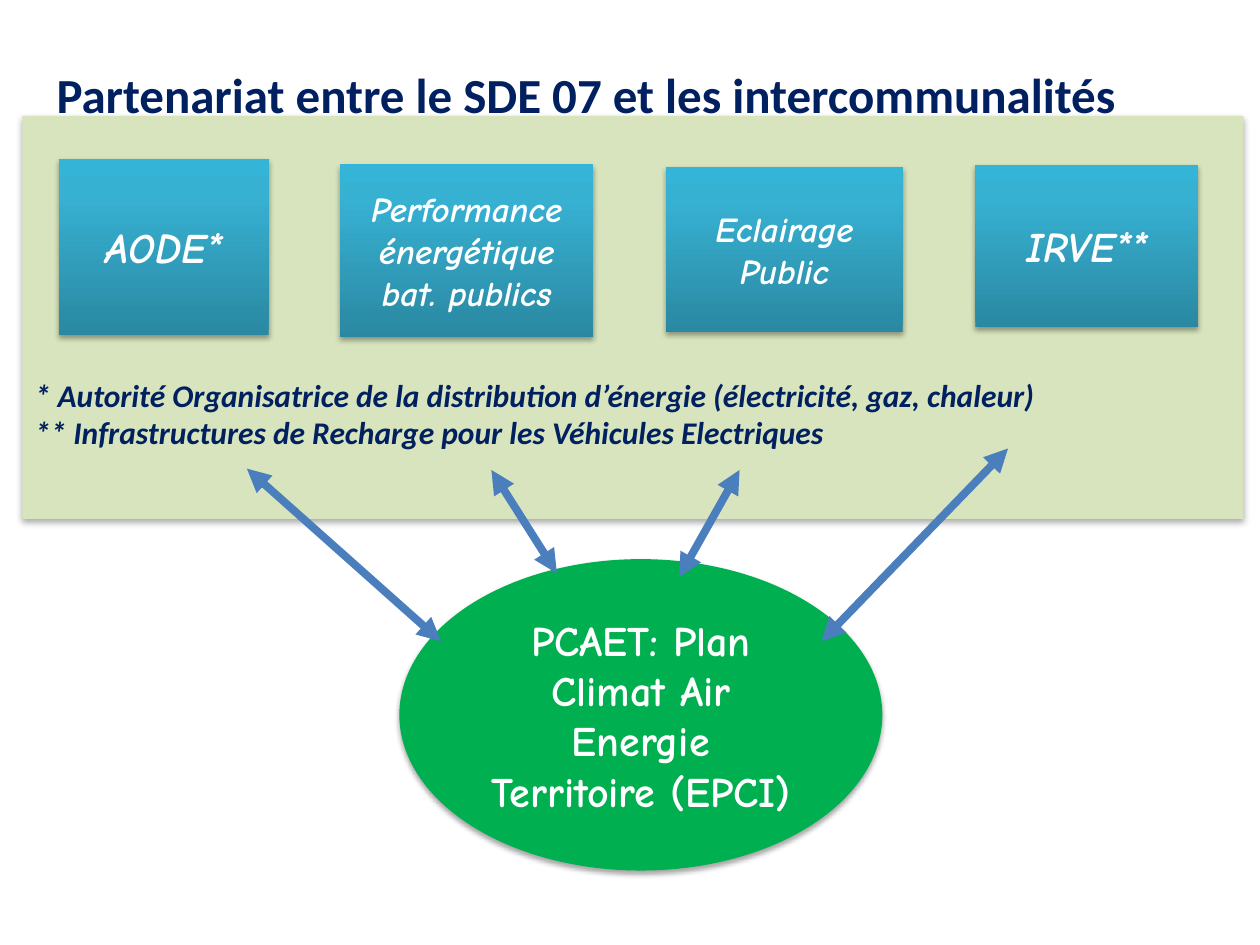
import copy
import pptx
import pptx.util
import pptx.dml.color
import pptx.enum.shapes
import pptx.enum.text
import pptx.oxml
import pptx.oxml.ns

Pt = pptx.util.Pt
RGB = pptx.dml.color.RGBColor
Kind = pptx.enum.shapes.MSO_SHAPE
Anchor = pptx.enum.text.MSO_ANCHOR
Align = pptx.enum.text.PP_ALIGN
qn = pptx.oxml.ns.qn

NAVY = RGB(0x00, 0x20, 0x60)
WHITE = RGB(0xFF, 0xFF, 0xFF)
GREEN = RGB(0x00, 0xB0, 0x50)
PALE = RGB(0xD7, 0xE4, 0xBD)
BLUE = RGB(0x4B, 0x7E, 0xBC)
TEALS = [(0, RGB(0x2A, 0x88, 0xA2)), (0.8, RGB(0x37, 0xB1, 0xD2)),
         (1, RGB(0x34, 0xB4, 0xD6))]


class Deck:
    """Holds the style and the current slide."""
    plain = "Calibri"
    comic = "Comic Neue"

    def __init__(self, wide, high):
        self.prs = pptx.Presentation()
        self.prs.slide_width, self.prs.slide_height = Pt(wide), Pt(high)
        self.slide = self.prs.slides.add_slide(self.prs.slide_layouts[6])

    def fill_text(self, frame, lines, size, font, color, italic=False,
                  align=Align.LEFT):
        frame.word_wrap = True
        for i, line in enumerate(lines):
            para = frame.add_paragraph() if i else frame.paragraphs[0]
            para.alignment = align
            run = para.add_run()
            run.text = line
            run.font.size, run.font.name = Pt(size), font
            run.font.bold, run.font.italic = True, italic
            run.font.color.rgb = color

    def shade(self, shape, blur, dist, alpha):
        shape.shadow.inherit = False
        spot = shape._element.spPr.find(qn("a:effectLst"))
        spot.append(pptx.oxml.parse_xml(
            f'<a:outerShdw {pptx.oxml.ns.nsdecls("a")} blurRad="{Pt(blur)}" '
            f'dist="{Pt(dist)}" dir="5400000" rotWithShape="0">'
            f'<a:srgbClr val="000000"><a:alpha val="{alpha * 1000}"/>'
            '</a:srgbClr></a:outerShdw>'))

    def shape(self, kind, at, fill, shade=(3.1, 1.8, 35)):
        shape = self.slide.shapes.add_shape(kind, *map(Pt, at))
        if isinstance(fill, list):
            self.blend(shape, fill)
        else:
            shape.fill.solid()
            shape.fill.fore_color.rgb = fill
        shape.line.fill.background()
        self.shade(shape, *shade)
        shape.text_frame.vertical_anchor = Anchor.MIDDLE
        return shape

    def blend(self, shape, stops):
        shape.fill.gradient()
        shape.fill.gradient_angle = 90
        group = shape._element.spPr.find(qn("a:gradFill")).find(qn("a:gsLst"))
        while len(group) < len(stops):
            group.append(copy.deepcopy(group[0]))
        for stop, (place, color) in zip(shape.fill.gradient_stops, stops):
            stop.position = place
            stop.color.rgb = color

    def label(self, kind, at, fill, text, size, italic):
        shape = self.shape(kind, at, fill)
        self.fill_text(shape.text_frame, [text], size, self.comic, WHITE,
                       italic, Align.CENTER)

    def panel(self, at, fill, lines, drop):
        frame = self.shape(Kind.RECTANGLE, at, fill, (3.5, 2.2, 32)).text_frame
        frame.vertical_anchor = Anchor.TOP
        frame.margin_top = Pt(drop)
        self.fill_text(frame, lines, 18, self.plain, NAVY, True)

    def arrow(self, *ends):
        line = self.slide.shapes.add_connector(
            pptx.enum.shapes.MSO_CONNECTOR.STRAIGHT, *map(Pt, ends))
        line.line.color.rgb = BLUE
        line.line.width = Pt(4.5)
        prop = line._element.spPr
        for tag in ("a:headEnd", "a:tailEnd"):
            tip = pptx.oxml.parse_xml(
                f'<{tag} {pptx.oxml.ns.nsdecls("a")} type="triangle"/>')
            prop.find(qn("a:ln")).append(tip)
        prop.append(pptx.oxml.parse_xml(
            f'<a:effectLst {pptx.oxml.ns.nsdecls("a")}/>'))

    def title(self, at, text):
        box = self.slide.shapes.add_textbox(*map(Pt, at))
        self.fill_text(box.text_frame, [text], 28, self.plain, NAVY)


def main():
    deck = Deck(720, 540)

    # Climate plan and panel with footnotes
    deck.label(Kind.OVAL, (228.2, 319.5, 276, 178), GREEN,
               "PCAET: Plan Climat Air Energie Territoire (EPCI)", 24, False)
    deck.panel((12.8, 66.2, 697.7, 230.4), PALE, [
        "* Autorité Organisatrice de la distribution d’énergie "
        "(électricité, gaz, chaleur)",
        "** Infrastructures de Recharge pour les Véhicules Electriques",
    ], 148.5)

    # Arrows from the panel to the plan
    for ends in [(141.1, 267.8, 252, 366.5), (422.6, 268.6, 388.1, 329.8),
                 (576, 256.3, 469.4, 366.5), (280.8, 268.6, 318.2, 327.6)]:
        deck.arrow(*ends)

    # Fields of work
    for text, size, at in [
        ("AODE*", 24, (33.8, 90.7, 119.8, 101)),
        ("Performance énergétique bat. publics", 20, (194.4, 94, 144.8, 98.6)),
        ("Eclairage Public", 20, (380.7, 95.3, 135.2, 94.3)),
        ("IRVE**", 24, (557.3, 94.3, 127.3, 92.7)),
    ]:
        deck.label(Kind.RECTANGLE, at, TEALS, text, size, True)

    # Title
    deck.title((25.2, 33.1, 638, 66.2),
               "Partenariat entre le SDE 07 et les intercommunalités")
    deck.prs.save("out.pptx")


if __name__ == "__main__":
    main()
